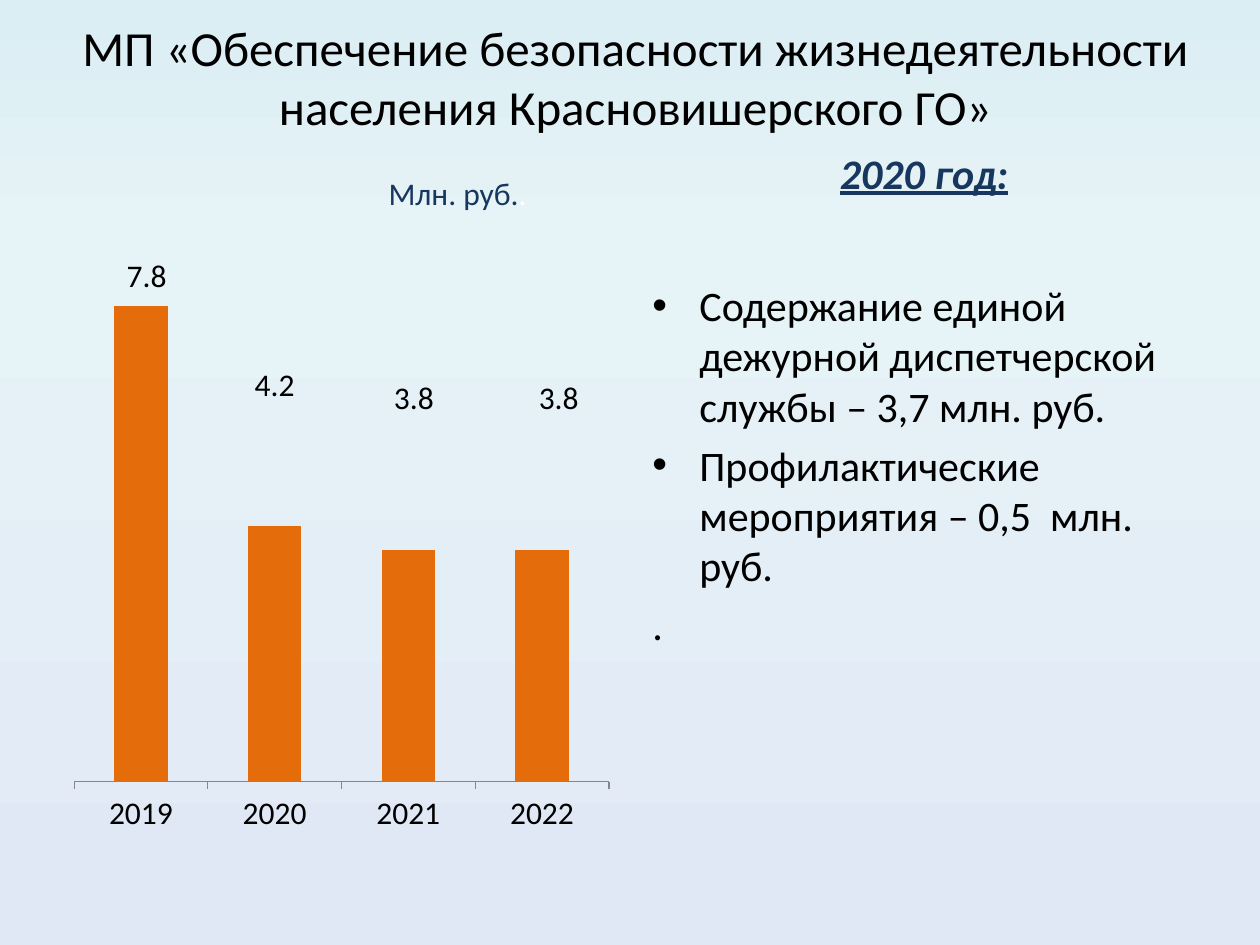
from copy import deepcopy

from lxml.etree import SubElement
from pptx import Presentation
from pptx.chart.data import CategoryChartData
from pptx.dml.color import RGBColor
from pptx.enum.chart import XL_CHART_TYPE as ChartType, XL_TICK_MARK as TickMark
from pptx.enum.text import MSO_ANCHOR as Anchor, MSO_AUTO_SIZE as AutoSize, PP_ALIGN as Align
from pptx.oxml import parse_xml
from pptx.oxml.ns import nsdecls, qn
from pptx.util import Cm, Pt

COLORS = {
    "text": "000000",
    "accent": "17375E",
    "white": "FFFFFF",
    "bar": "E46C0A",
    "axis": "878787",
}
BACKGROUND = [(0, "DBEEF4"), (25, "E6F3F7"), (100, "E1E8F5")]


class SlideBuilder:
    font_name = "Calibri"

    def __init__(self, presentation):
        self.slide = presentation.slides.add_slide(presentation.slide_layouts[5])

    def color(self, name):
        return RGBColor.from_string(COLORS[name])

    def style(self, font, size, color="text"):
        font.name = self.font_name
        font.size = Pt(size)
        font.color.rgb = self.color(color)

    def background(self, stops):
        fill = self.slide.background.fill
        fill.gradient()
        fill.gradient_angle = 270
        stop_list = next(self.slide.element.iter(qn("a:gsLst")))
        stop_list.insert(1, deepcopy(stop_list[0]))
        for stop, (position, color) in zip(fill.gradient_stops, stops):
            stop.position = position / 100
            stop.color.rgb = RGBColor.from_string(color)

    def title(self, text, box):
        shape = self.slide.shapes.title
        shape.left, shape.top, shape.width, shape.height = map(Cm, box)
        frame = shape.text_frame
        frame.text = text
        frame.word_wrap = True
        frame.auto_size = AutoSize.NONE
        frame.vertical_anchor = Anchor.MIDDLE
        frame.paragraphs[0].alignment = Align.CENTER
        self.style(frame.paragraphs[0].font, 28)

    def text_frame(self, box, anchor):
        frame = self.slide.shapes.add_textbox(*map(Cm, box)).text_frame
        frame.word_wrap = True
        frame.vertical_anchor = anchor
        return frame

    def caption(self, text, box, size):
        paragraph = self.text_frame(box, Anchor.MIDDLE).paragraphs[0]
        paragraph.alignment = Align.CENTER
        paragraph.add_run().text = text
        self.style(paragraph.font, size, "accent")
        return paragraph

    def body(self, items, closing, box):
        frame = self.text_frame(box, Anchor.TOP)
        frame.text = "\n".join([*items, closing])
        for index, paragraph in enumerate(frame.paragraphs):
            paragraph.space_before = Pt(4.8)
            self.style(paragraph.font, 24)
            if index < len(items):
                self.bullet(paragraph)

    def bullet(self, paragraph):
        properties = paragraph._p.get_or_add_pPr()
        properties.set("marL", str(Cm(0.95)))
        properties.set("indent", str(-Cm(0.95)))
        bullet_font = parse_xml(f'<a:buFont {nsdecls("a")} typeface="Arial"/>')
        bullet_char = parse_xml(f'<a:buChar {nsdecls("a")} char="•"/>')
        defaults = properties.find(qn("a:defRPr"))
        defaults.addprevious(bullet_font)
        defaults.addprevious(bullet_char)

    def layout(self, **values):
        layout = parse_xml(f'<c:layout {nsdecls("c")}><c:manualLayout/></c:layout>')
        for name, value in values.items():
            SubElement(layout[0], qn(f"c:{name}")).set("val", str(value))
        return layout

    def column_chart(self, categories, values, label_offsets, box):
        data = CategoryChartData()
        data.categories = categories
        data.add_series("Series 1", values)
        chart = self.slide.shapes.add_chart(
            ChartType.COLUMN_STACKED, *map(Cm, box), data
        ).chart
        chart.has_legend = False
        chart.has_title = False
        self.style(chart.font, 18)

        value_axis = chart.value_axis
        value_axis.visible = False
        value_axis.has_major_gridlines = False
        value_axis.minimum_scale = 0
        value_axis.maximum_scale = 9
        category_axis = chart.category_axis
        category_axis.major_tick_mark = TickMark.OUTSIDE
        category_axis.format.line.color.rgb = self.color("axis")

        plot = chart.plots[0]
        plot.gap_width = 150
        plot.overlap = 100
        plot.vary_by_categories = False
        series = plot.series[0]
        series.format.fill.solid()
        series.format.fill.fore_color.rgb = self.color("bar")
        series.data_labels.show_value = True
        for index in range(len(values)):
            self.style(series.points[index].data_label.font, 18)
        for label, (x, y) in zip(chart.element.iter(qn("c:dLbl")), label_offsets):
            label.insert(1, self.layout(x=x, y=y))
        for leader_lines in chart.element.iter(qn("c:showLeaderLines")):
            leader_lines.set("val", "0")

        plot_area = next(chart.element.iter(qn("c:plotArea")))
        for old_layout in plot_area.findall(qn("c:layout")):
            plot_area.remove(old_layout)
        plot_area.insert(0, self.layout(
            layoutTarget="inner", xMode="edge", yMode="edge",
            x=0.02, y=0.02, w=0.96, h=0.88,
        ))


def main():
    presentation = Presentation()
    presentation.slide_width = Cm(25.4)
    presentation.slide_height = Cm(19.05)
    builder = SlideBuilder(presentation)
    builder.background(BACKGROUND)
    builder.title(
        "МП «Обеспечение безопасности жизнедеятельности населения Красновишерского ГО»",
        (0.64, 0.76, 24.33, 1.57),
    )
    builder.column_chart(
        ["2019", "2020", "2021", "2022"],
        [7.8, 4.2, 3.8, 3.8],
        [(0.01, -0.43), (0, -0.43), (0.01, -0.43), (0.03, -0.43)],
        (1.27, 4.45, 11.23, 12.57),
    )
    builder.body(
        [
            "Содержание единой дежурной диспетчерской службы – 3,7 млн. руб.",
            "Профилактические мероприятия – 0,5  млн. руб.",
        ],
        ".",
        (12.9, 5.51, 11.23, 11.51),
    )
    year = builder.caption("2020 год:", (16.51, 2.74, 4.24, 1.47), 24)
    year.font.bold = year.font.italic = year.font.underline = True
    unit = builder.caption("Млн. руб.", (7.42, 3.51, 3.61, 0.74), 18)
    dot = unit.add_run()
    dot.text = "."
    dot.font.color.rgb = builder.color("white")
    presentation.save("out.pptx")


if __name__ == "__main__":
    main()
